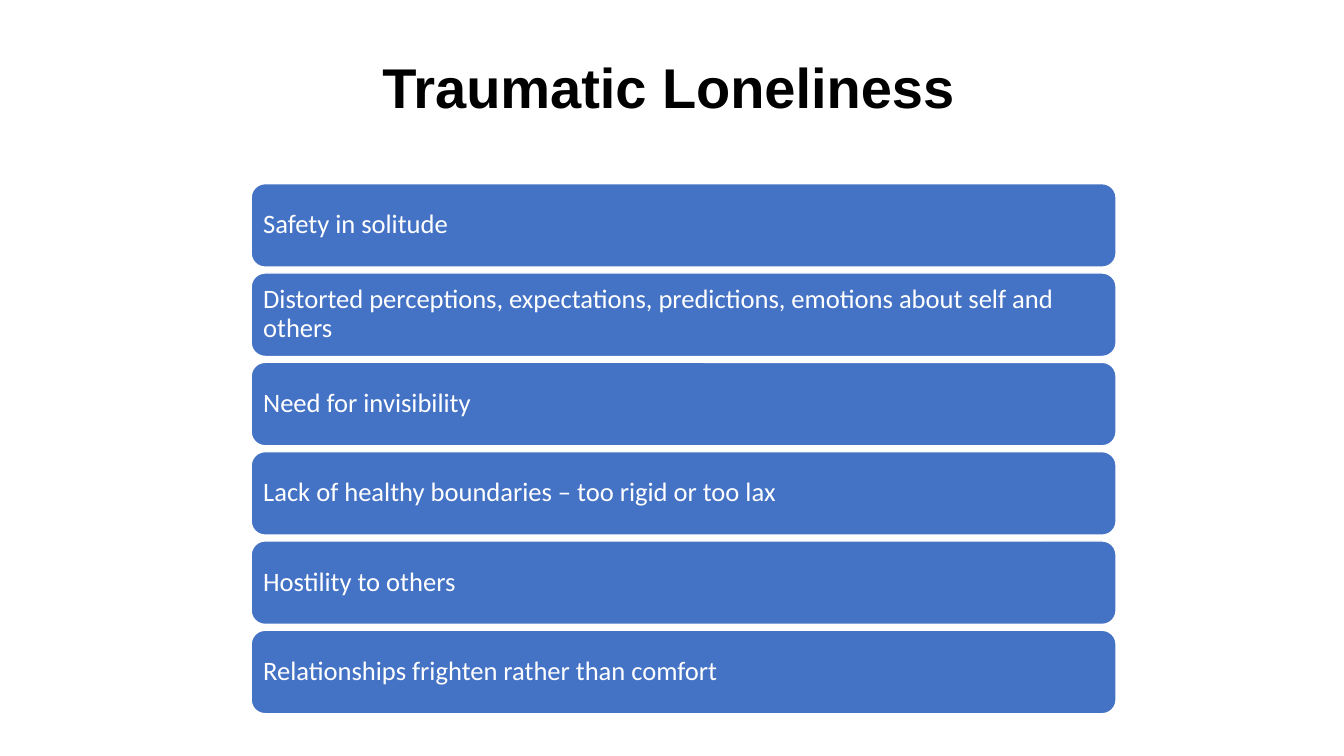
from pptx import Presentation
from pptx.dml.color import RGBColor
from pptx.enum.shapes import MSO_SHAPE
from pptx.enum.text import MSO_ANCHOR, PP_ALIGN
from pptx.util import Pt

ROUNDED = MSO_SHAPE.ROUNDED_RECTANGLE
MIDDLE = MSO_ANCHOR.MIDDLE
LEFT, CENTER = PP_ALIGN.LEFT, PP_ALIGN.CENTER

# Content
TITLE = "Traumatic Loneliness"
SIGNS = [
    "Safety in solitude",
    "Distorted perceptions, expectations, predictions, emotions about self and others",
    "Need for invisibility",
    "Lack of healthy boundaries – too rigid or too lax",
    "Hostility to others",
    "Relationships frighten rather than comfort",
]
COLORS = {"title": "000000", "bar": "4472C4", "white": "FFFFFF"}

# Layout in points
SLIDE_WIDTH, SLIDE_HEIGHT = 960, 540
TITLE_BOX = (117.4, 20.2, 720, 82.8)
BAR_LEFT, BAR_TOP, BAR_WIDTH, BAR_HEIGHT = 179.4, 131.2, 617.8, 59.6
BAR_GAP = 4.2
BAR_INSET = 5.7


def color(name):
    return RGBColor.from_string(COLORS[name])


def write(shape, text, *, font, size, ink, align, bold=False, spacing=0.9, inset=None):
    frame = shape.text_frame
    frame.word_wrap = True
    frame.vertical_anchor = MIDDLE
    if inset is not None:
        frame.margin_left = frame.margin_right = Pt(inset)
        frame.margin_top = frame.margin_bottom = Pt(inset)
    para = frame.paragraphs[0]
    para.alignment = align
    para.line_spacing = spacing
    span = para.add_run()
    span.text = text
    span.font.name = font
    span.font.size = Pt(size)
    span.font.bold = bold
    span.font.color.rgb = color(ink)


deck = Presentation()
deck.slide_width, deck.slide_height = Pt(SLIDE_WIDTH), Pt(SLIDE_HEIGHT)
page = deck.slides.add_slide(deck.slide_layouts[5])

# Title
title = page.shapes.title
title.left, title.top, title.width, title.height = map(Pt, TITLE_BOX)
write(title, TITLE, font="Arial", size=40, ink="title", align=CENTER, bold=True, spacing=1.0)

# Stack of bars
for row, sign in enumerate(SIGNS):
    top = BAR_TOP + row * (BAR_HEIGHT + BAR_GAP)
    bar = page.shapes.add_shape(ROUNDED, Pt(BAR_LEFT), Pt(top), Pt(BAR_WIDTH), Pt(BAR_HEIGHT))
    bar.shadow.inherit = False
    bar.fill.solid()
    bar.fill.fore_color.rgb = color("bar")
    bar.line.color.rgb = color("white")
    bar.line.width = Pt(1)
    write(bar, sign, font="Calibri", size=19, ink="white", align=LEFT, inset=BAR_INSET)

deck.save("out.pptx")
